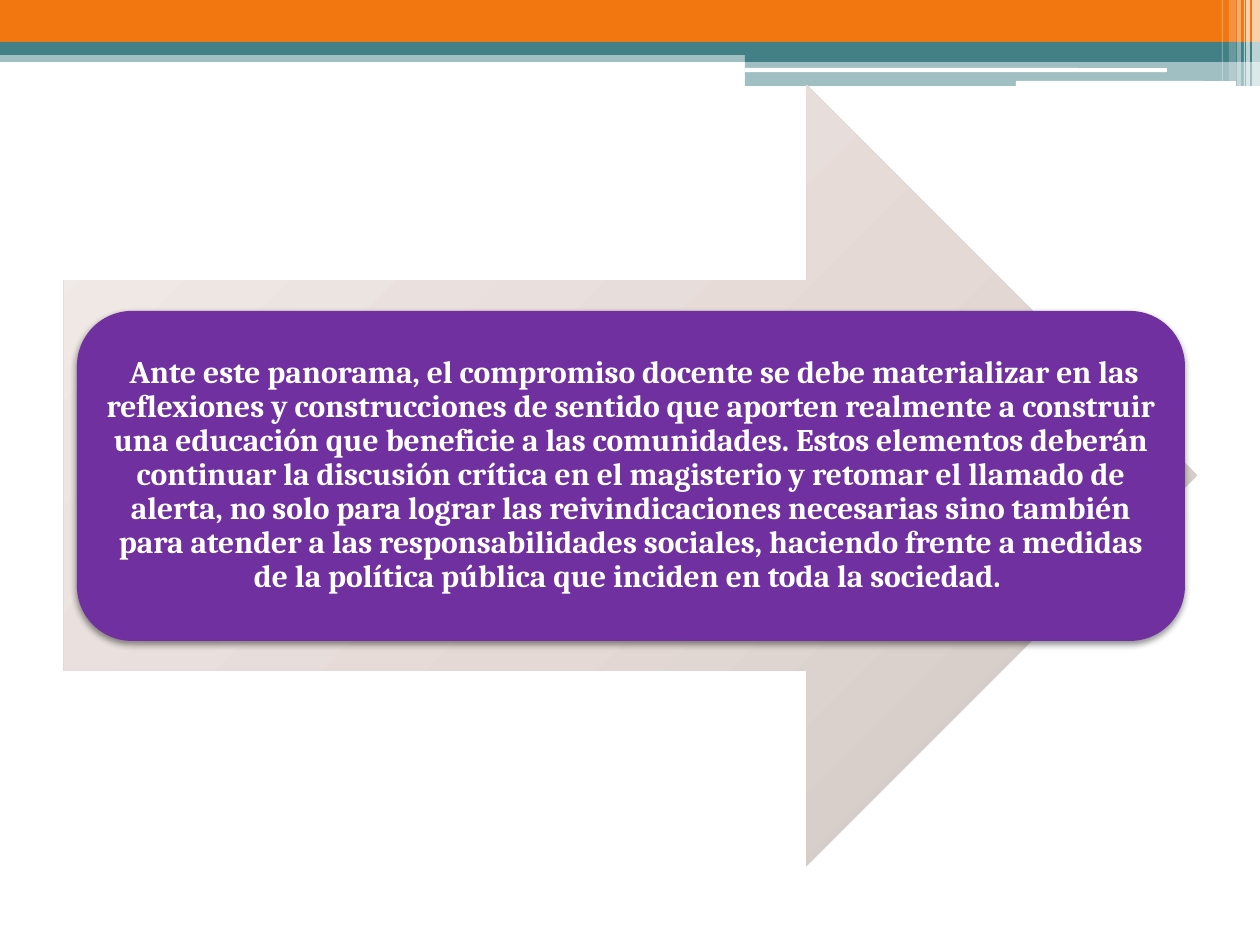
import pptx
import pptx.util
import pptx.dml.color
import pptx.enum.shapes
import pptx.enum.text
import pptx.oxml
import pptx.oxml.ns

SCALE = 914400 / 126  # EMU per px
NS = pptx.oxml.ns.nsdecls("a")
MSO = pptx.enum.shapes.MSO_SHAPE
TEAL, ORANGE, WHITE, PURPLE = "438086", "F37711", "FFFFFF", "7030A0"


def color(value):
    return pptx.dml.color.RGBColor.from_string(value)


def add_block(kind, box, fill, opacity=100):
    block = slide.shapes.add_shape(kind, *[round(v * SCALE) for v in box])
    block.shadow.inherit = False
    block.line.fill.background()
    block.fill.solid()
    block.fill.fore_color.rgb = color(fill)
    if opacity < 100:
        solid = block.fill._xPr.find(pptx.oxml.ns.qn("a:solidFill"))
        solid[0].append(pptx.oxml.parse_xml(f'<a:alpha {NS} val="{opacity * 1000}"/>'))
    return block


prs = pptx.Presentation()
prs.slide_width = round(1260 * SCALE)
prs.slide_height = round(945 * SCALE)
slide = prs.slides.add_slide(prs.slide_layouts[6])

# Header bands
for box, fill, opacity in [
    ((0, 50, 1260, 12), TEAL, 50),
    ((0, 0, 1260, 42), ORANGE, 100),
    ((0, 42, 1260, 13), TEAL, 100),
    ((745, 49, 515, 13), TEAL, 100),
    ((745, 62, 515, 24), TEAL, 50),
]:
    add_block(MSO.RECTANGLE, box, fill, opacity)

# White rules under the bands
for box in [(745, 68, 422, 4), (1016, 81, 220, 5)]:
    add_block(MSO.ROUNDED_RECTANGLE, box, WHITE)

# Translucent stripes at the right edge: left, width, height, opacity
for left, width, height, opacity in [
    (1252, 8, 86, 65), (1246, 4, 86, 65), (1244, 1, 86, 60),
    (1237, 4, 86, 40), (1229, 7, 81, 20), (1222, 1, 81, 30),
]:
    add_block(MSO.RECTANGLE, (left, 0, width, height), WHITE, opacity)

# Background arrow with a radial gradient
arrow = add_block(MSO.RIGHT_ARROW, (64, 85, 1133, 781), "E4D9D5")
arrow_pr = arrow.fill._xPr
stops = "".join(
    f'<a:gs pos="{pos * 1000}"><a:srgbClr val="{tone}"/></a:gs>'
    for pos, tone in [(0, "F2ECEA"), (55, "E4D9D5"), (100, "CBC4C0")]
)
arrow_pr.replace(arrow_pr.find(pptx.oxml.ns.qn("a:solidFill")), pptx.oxml.parse_xml(
    f'<a:gradFill {NS} rotWithShape="1"><a:gsLst>{stops}</a:gsLst><a:path path="circle">'
    '<a:fillToRect l="-40000" t="-90000" r="140000" b="190000"/></a:path></a:gradFill>'))

# Message panel with a soft shadow below
panel = add_block(MSO.ROUNDED_RECTANGLE, (77, 311, 1108, 330), PURPLE)
panel.fill._xPr.find(pptx.oxml.ns.qn("a:effectLst")).append(pptx.oxml.parse_xml(
    f'<a:outerShdw {NS} blurRad="50800" dist="25400" dir="5400000" rotWithShape="0">'
    '<a:srgbClr val="000000"><a:alpha val="45000"/></a:srgbClr></a:outerShdw>'))

# Message
message = slide.shapes.add_textbox(*[round(v * SCALE) for v in (93, 327, 1076, 297)])
frame = message.text_frame
frame.word_wrap = True
frame.vertical_anchor = pptx.enum.text.MSO_ANCHOR.MIDDLE
frame.margin_left = frame.margin_right = round(9 * SCALE)
frame.margin_top = frame.margin_bottom = round(9 * SCALE)
paragraph = frame.paragraphs[0]
paragraph.text = (
    " Ante este panorama, el compromiso docente se debe materializar en las "
    "reflexiones y construcciones de sentido que aporten realmente a construir "
    "una educación que beneficie a las comunidades. Estos elementos deberán "
    "continuar la discusión crítica en el magisterio y retomar el llamado de "
    "alerta, no solo para lograr las reivindicaciones necesarias sino también "
    "para atender a las responsabilidades sociales, haciendo frente a medidas "
    "de la política pública que inciden en toda la sociedad. "
)
paragraph.alignment = pptx.enum.text.PP_ALIGN.CENTER
paragraph.line_spacing = 0.9
paragraph.font.name = "Cambria"
paragraph.font.size = pptx.util.Pt(18)
paragraph.font.bold = True
paragraph.font.color.rgb = color(WHITE)

prs.save("out.pptx")
